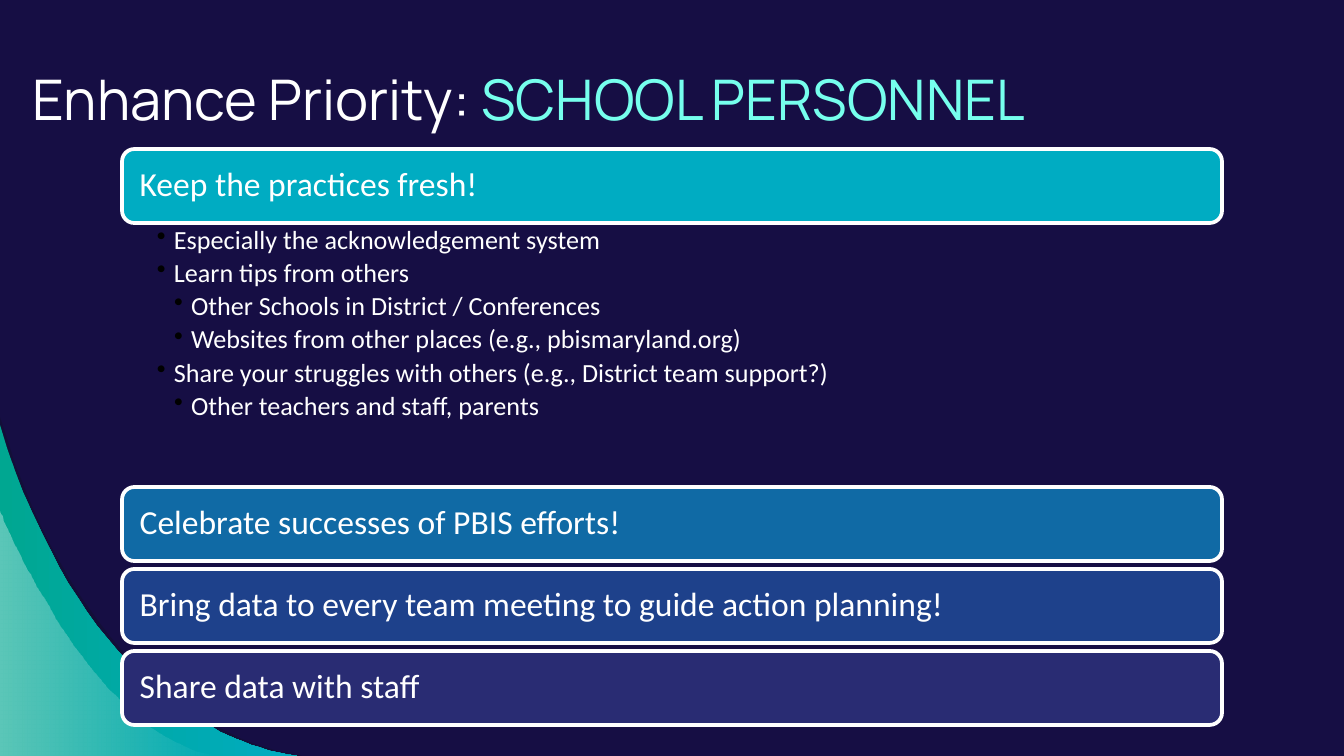
from lxml import etree
from pptx import Presentation
from pptx.dml.color import RGBColor
from pptx.enum.shapes import MSO_SHAPE
from pptx.enum.text import MSO_ANCHOR, MSO_AUTO_SIZE, PP_ALIGN
from pptx.oxml.ns import qn
from pptx.util import Pt

ROUNDED = MSO_SHAPE.ROUNDED_RECTANGLE
TOP, MIDDLE = MSO_ANCHOR.TOP, MSO_ANCHOR.MIDDLE
NO_FIT = MSO_AUTO_SIZE.NONE
LEFT = PP_ALIGN.LEFT

# Content
COLORS = {
    "background": "160E44", "white": "FFFFFF", "mint": "76FFED",
    "shade": "12102F", "green": "00A791", "teal": "00ACC2",
    "blue": "106AA5", "royal": "1E418B", "indigo": "292C73",
    "bullet": "000000",
}
TITLE = [("Enhance Priority: ", "white"), ("SCHOOL PERSONNEL", "mint")]
# Each priority: heading, bar colour, details as (level, text)
PRIORITIES = [
    ("Keep the practices fresh!", "teal", [
        (1, "Especially the acknowledgement system"),
        (1, "Learn tips from others"),
        (2, "Other Schools in District / Conferences"),
        (2, "Websites from other places (e.g., pbismaryland.org)"),
        (1, "Share your struggles with others (e.g., District team support?)"),
        (2, "Other teachers and staff, parents"),
    ]),
    ("Celebrate successes of PBIS efforts!", "blue", []),
    ("Bring data to every team meeting to guide action planning!", "royal", []),
    ("Share data with staff", "indigo", []),
]
# Corner waves: Bezier points in px, gradient or flat stops as (colour, opacity %)
WAVES = [
    ([(0, 417), (98, 745), (305, 756), (305, 756)], [("shade", 54)]),
    ([(0, 425), (97, 746), (297, 756), (297, 756)],
     [("green", 100), ("teal", 100)]),
    ([(0, 511), (0, 511), (93, 741), (218, 756)],
     [("white", 36), ("white", 0)]),
]

# Layout in px
SLIDE_W, SLIDE_H = 1344, 756
BAR_X, BAR_Y, BAR_W, BAR_H, BAR_GAP = 122, 149, 1100, 74, 8
DETAILS_H = 264
INDENT = 17
CURVE_STEPS = 40
EMU_PER_PX = 914400 / 134.4


def px(length):
    return round(length * EMU_PER_PX)


def color(name):
    return RGBColor.from_string(COLORS[name])


def style(font, size, face, name):
    font.size, font.name = Pt(size), face
    font.color.rgb = color(name)


def set_frame(frame, anchor, left, top, right, bottom):
    frame.word_wrap = True
    frame.auto_size = NO_FIT
    frame.vertical_anchor = anchor
    frame.margin_left, frame.margin_top = px(left), px(top)
    frame.margin_right, frame.margin_bottom = px(right), px(bottom)


def bezier(points, t):
    weights = ((1 - t) ** 3, 3 * t * (1 - t) ** 2, 3 * t * t * (1 - t), t ** 3)
    return tuple(sum(w * p[axis] for w, p in zip(weights, points))
                 for axis in (0, 1))


def add_wave(points, stops):
    builder = slide.shapes.build_freeform(*points[0], scale=EMU_PER_PX)
    curve = [bezier(points, i / CURVE_STEPS) for i in range(1, CURVE_STEPS + 1)]
    builder.add_line_segments(curve + [(0, SLIDE_H)], close=True)
    wave = builder.convert_to_shape()
    wave.shadow.inherit = False
    wave.line.fill.background()
    if len(stops) == 1:
        wave.fill.solid()
        wave.fill.fore_color.rgb = color(stops[0][0])
    else:
        wave.fill.gradient()
        wave.fill.gradient_angle = 0
        for stop, (name, _) in zip(wave.fill.gradient_stops, stops):
            stop.color.rgb = color(name)
    fills = wave.element.spPr.iter(qn("a:srgbClr"))
    for fill_color, (_, opacity) in zip(list(fills), stops):
        etree.SubElement(fill_color, qn("a:alpha"), val=str(opacity * 1000))


def add_bar(heading, fill_name, y):
    bar = slide.shapes.add_shape(ROUNDED, px(BAR_X), px(y), px(BAR_W), px(BAR_H))
    bar.shadow.inherit = False
    bar.fill.solid()
    bar.fill.fore_color.rgb = color(fill_name)
    bar.line.color.rgb = color("white")
    bar.line.width = Pt(2)
    set_frame(bar.text_frame, MIDDLE, 14, 14, 14, 14)
    bar.text_frame.text = heading
    paragraph = bar.text_frame.paragraphs[0]
    paragraph.alignment = LEFT
    paragraph.line_spacing = 0.9
    style(paragraph.runs[0].font, 18, "Calibri", "white")


def add_details(details, y):
    box = slide.shapes.add_textbox(px(BAR_X), px(y), px(BAR_W), px(DETAILS_H))
    frame = box.text_frame
    set_frame(frame, TOP, 35, 4, 19, 4)
    frame.text = "\n".join(text for _, text in details)
    for paragraph, (level, _) in zip(frame.paragraphs, details):
        paragraph.level = level
        paragraph.line_spacing = 0.9
        paragraph.space_after = Pt(2.6)
        props = paragraph._p.get_or_add_pPr()
        props.set("marL", str(px(level * INDENT)))
        props.set("indent", str(-px(INDENT)))
        bullet_color = etree.SubElement(props, qn("a:buClr"))
        etree.SubElement(bullet_color, qn("a:srgbClr"), val=COLORS["bullet"])
        etree.SubElement(props, qn("a:buChar"), char="•")
        style(paragraph.runs[0].font, 14, "Calibri", "white")


prs = Presentation()
prs.slide_width, prs.slide_height = px(SLIDE_W), px(SLIDE_H)
slide = prs.slides.add_slide(prs.slide_layouts[5])
slide.background.fill.solid()
slide.background.fill.fore_color.rgb = color("background")

# Corner waves
for points, stops in WAVES:
    add_wave(points, stops)

# Title
title = slide.shapes.title
title.left, title.top, title.width, title.height = px(19), px(51), px(1305), px(93)
set_frame(title.text_frame, TOP, 13, 13, 13, 13)
title_line = title.text_frame.paragraphs[0]
title_line.alignment = LEFT
for text, name in TITLE:
    run = title_line.add_run()
    run.text = text
    style(run.font, 30, "Manrope", name)

# Priority bars, with details below where there are any
y = BAR_Y
for heading, fill_name, details in PRIORITIES:
    add_bar(heading, fill_name, y)
    y += BAR_H
    if details:
        add_details(details, y)
        y += DETAILS_H
    else:
        y += BAR_GAP

prs.save("out.pptx")
